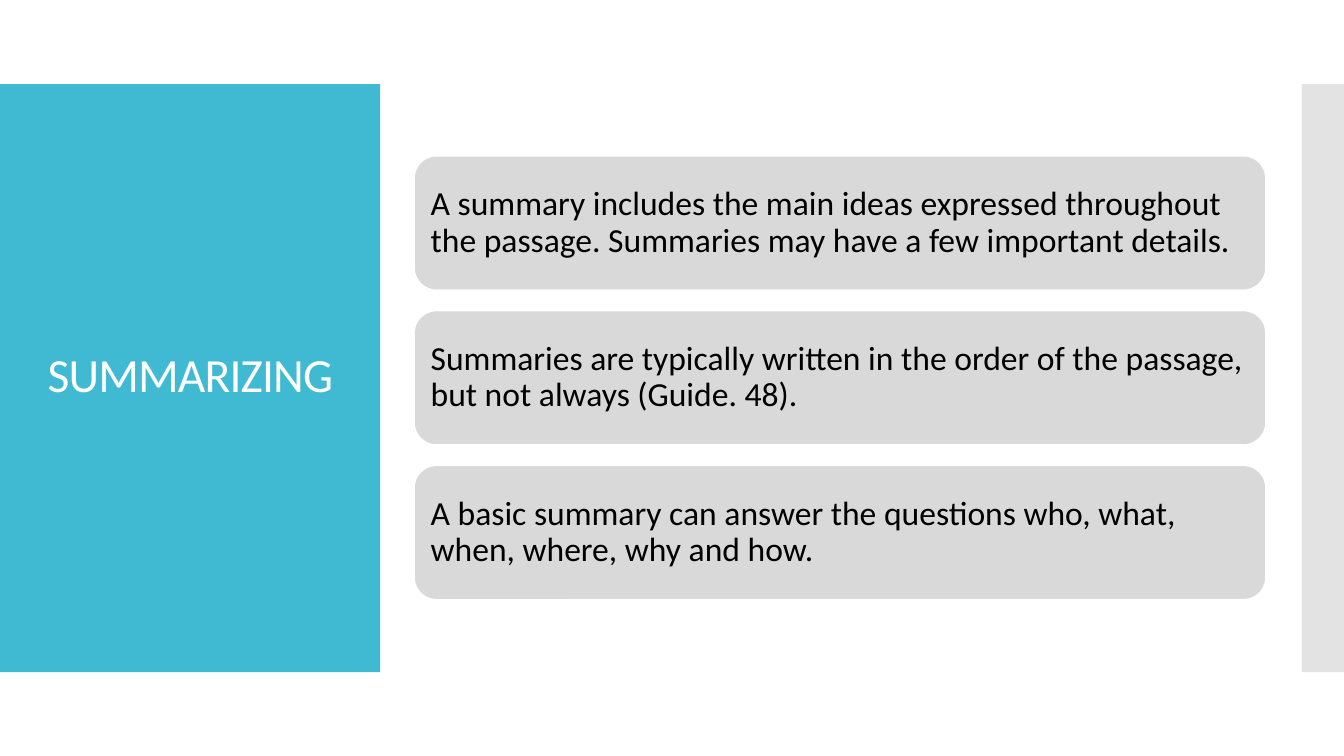
from lxml import etree
from pptx import Presentation
from pptx import util as u
from pptx.dml.color import RGBColor
from pptx.enum import shapes, text
from pptx.oxml.ns import qn

COLOURS = {
    "panel": "40BAD2",
    "edge": "C8C8C8",
    "card": "D9D9D9",
    "white": "FFFFFF",
    "black": "000000",
}
FONT = "Calibri"
BAND_TOP, BAND_HEIGHT = 2.12, 14.82
CARD_LEFT, CARD_TOP, CARD_WIDTH, CARD_HEIGHT = 10.44, 3.93, 21.46, 3.38
CARD_PITCH = 3.9
POINTS = [
    "A summary includes the main ideas expressed throughout the passage. "
    "Summaries may have a few important details.",
    "Summaries are typically written in the order of the passage, "
    "but not always (Guide. 48).",
    "A basic summary can answer the questions who, what, when, where, why and how.",
]


def colour(name):
    return RGBColor.from_string(COLOURS[name])


def add_block(slide, kind, left, top, width, height, fill):
    block = slide.shapes.add_shape(
        kind, u.Cm(left), u.Cm(top), u.Cm(width), u.Cm(height))
    block.shadow.inherit = False
    block.fill.solid()
    block.fill.fore_color.rgb = colour(fill)
    block.line.fill.background()
    return block


def set_opacity(shape, percent):
    tint = shape.fill._xPr.find(qn("a:solidFill"))[0]
    etree.SubElement(tint, qn("a:alpha")).set("val", str(percent * 1000))


def write(shape, words, size, ink, align):
    """Fill a shape with one vertically centred paragraph."""
    frame = shape.text_frame
    frame.text = words
    frame.word_wrap = True
    frame.vertical_anchor = text.MSO_ANCHOR.MIDDLE
    para = frame.paragraphs[0]
    para.alignment = align
    para.line_spacing = 0.9
    span = para.runs[0]
    span.font.name = FONT
    span.font.size = u.Pt(size)
    span.font.color.rgb = colour(ink)
    return span


def add_title(slide, words):
    box = slide.shapes.add_textbox(u.Cm(0.71), u.Cm(3.12), u.Cm(8.18), u.Cm(12.78))
    span = write(box, words, 34, "white", text.PP_ALIGN.CENTER)
    span.font._element.set("spc", "-60")


def add_card(slide, top, words):
    card = add_block(slide, shapes.MSO_SHAPE.ROUNDED_RECTANGLE,
                     CARD_LEFT, top, CARD_WIDTH, CARD_HEIGHT, "card")
    card.line.color.rgb = colour("white")
    card.line.width = u.Pt(0.85)
    write(card, words, 24, "black", text.PP_ALIGN.LEFT)


def main():
    deck = Presentation()
    deck.slide_width, deck.slide_height = u.Cm(33.87), u.Cm(19.05)
    slide = deck.slides.add_slide(deck.slide_layouts[6])

    rectangle = shapes.MSO_SHAPE.RECTANGLE
    add_block(slide, rectangle, 0, BAND_TOP, 9.58, BAND_HEIGHT, "panel")
    edge = add_block(slide, rectangle, 32.81, BAND_TOP, 1.06, BAND_HEIGHT, "edge")
    set_opacity(edge, 50)
    add_title(slide, "SUMMARIZING")
    for index, words in enumerate(POINTS):
        add_card(slide, CARD_TOP + index * CARD_PITCH, words)

    deck.save("out.pptx")


if __name__ == "__main__":
    main()
